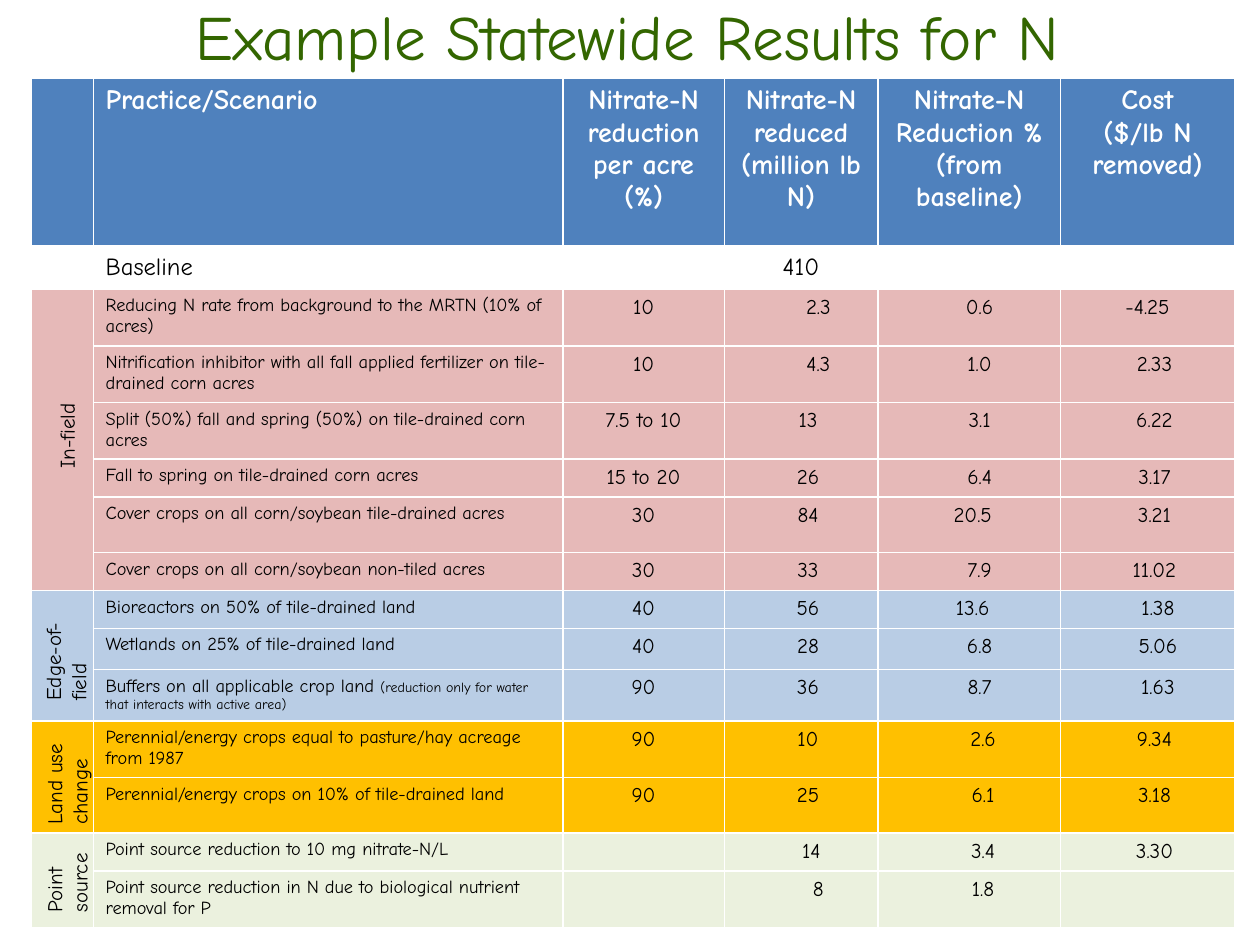
from lxml.etree import SubElement
from pptx import Presentation
from pptx.dml.color import RGBColor
from pptx.enum.text import MSO_ANCHOR as Anchor, PP_ALIGN as Align
from pptx.oxml.ns import qn
from pptx.util import Cm, Pt

COLORS = {
    "title": "336600", "header": "4F81BD", "white": "FFFFFF", "black": "000000",
    "In-field": "E6B9B8", "Edge-of-field": "B9CDE5",
    "Land use change": "FFC000", "Point source": "EBF1DE",
}
FONT = "Comic Neue"
COLUMN_WIDTHS = [1.24, 9.47, 3.25, 3.1, 3.68, 3.51]
HEADER_HEIGHT, BASELINE_HEIGHT = 3.4, 0.84
CELL_MARGIN, SHIFT_STEP = 0.25, 0.14
HEADERS = [
    "", "Practice/Scenario", "Nitrate-N reduction per acre (%)",
    "Nitrate-N reduced (million lb N)", "Nitrate-N Reduction % (from baseline)",
    "Cost\n($/lb N removed)",
]
BASELINE = ["", "Baseline", "", "410", "", ""]
# Each row: height, practice, note, values, indent steps of the values
GROUPS = {
    "In-field": [
        (1.12, "Reducing N rate from background to the MRTN (10% of acres)", "",
         ["10", "2.3", "0.6", "-4.25"], [0, 5, 3, 0]),
        (1.12, "Nitrification inhibitor with all fall applied fertilizer on tile-drained corn acres", "",
         ["10", "4.3", "1.0", "2.33"], [0, 5, 3, 2]),
        (1.12, "Split (50%) fall and spring (50%) on tile-drained corn acres", "",
         ["7.5 to 10", "13", "3.1", "6.22"], [0, 2, 3, 2]),
        (0.75, "Fall to spring on tile-drained corn acres", "",
         ["15 to 20", "26", "6.4", "3.17"], [0, 2, 3, 2]),
        (1.12, "Cover crops on all corn/soybean tile-drained acres", "",
         ["30", "84", "20.5", "3.21"], [0, 2, 1, 2]),
        (0.75, "Cover crops on all corn/soybean non-tiled acres", "",
         ["30", "33", "7.9", "11.02"], [0, 2, 3, 2]),
    ],
    "Edge-of-field": [
        (0.75, "Bioreactors on 50% of tile-drained land", "",
         ["40", "56", "13.6", "1.38"], [0, 2, 1, 3]),
        (0.83, "Wetlands on 25% of tile-drained land", "",
         ["40", "28", "6.8", "5.06"], [0, 2, 3, 3]),
        (1.02, "Buffers on all applicable crop land ",
         "(reduction only for water that interacts with active area)",
         ["90", "36", "8.7", "1.63"], [0, 2, 3, 3]),
    ],
    "Land use change": [
        (1.12, "Perennial/energy crops equal to pasture/hay acreage from 1987", "",
         ["90", "10", "2.6", "9.34"], [0, 2, 4, 2]),
        (1.12, "Perennial/energy crops on 10% of tile-drained land", "",
         ["90", "25", "6.1", "3.18"], [0, 2, 4, 2]),
    ],
    "Point source": [
        (0.75, "Point source reduction to 10 mg nitrate-N/L", "",
         ["", "14", "3.4", "3.30"], [0, 3, 4, 2]),
        (0.92, "Point source reduction in N due to biological nutrient removal for P", "",
         ["", "8", "1.8", ""], [0, 5, 4, 0]),
    ],
}
LABEL_BOXES = {
    "Point source": (0.38, 17.04, 1.93, 1.27),
    "Edge-of-field": (-0.05, 12.37, 2.74, 1.27),
    "Land use change": (0.1, 14.99, 2.49, 1.27),
    "In-field": (0.3, 8.28, 2.08, 0.76),
}


def rgb(name):
    return RGBColor.from_string(COLORS[name])


def write(para, text, size=12, color="black", bold=False, align=Align.LEFT):
    para.alignment = align
    if not text:
        SubElement(para._p, qn("a:endParaRPr"), sz=str(int(size * 100)))
        return
    span = para.add_run()
    span.text = text
    span.font.name = FONT
    span.font.size = Pt(size)
    span.font.bold = bold
    span.font.color.rgb = rgb(color)


def add_text(page, box, text, anchor=Anchor.TOP, rotation=0, **style):
    holder = page.shapes.add_textbox(*map(Cm, box))
    holder.rotation = rotation
    frame = holder.text_frame
    frame.word_wrap = True
    frame.vertical_anchor = anchor
    write(frame.paragraphs[0], text, **style)


def set_borders(cell, bottom):
    properties = cell._tc.get_or_add_tcPr()
    for side, width in (("L", 1), ("R", 1), ("T", 1), ("B", bottom)):
        line = SubElement(properties, qn(f"a:ln{side}"), w=str(Pt(width)))
        fill = SubElement(line, qn("a:solidFill"))
        SubElement(fill, qn("a:srgbClr"), val=COLORS["white"])


def fill_cell(cell, text, fill, note="", shift=0, bottom=1, **style):
    set_borders(cell, bottom)
    cell.fill.solid()
    cell.fill.fore_color.rgb = rgb(fill)
    cell.margin_left = Cm(CELL_MARGIN + shift * SHIFT_STEP)
    frame = cell.text_frame
    for index, line in enumerate(text.split("\n")):
        para = frame.add_paragraph() if index else frame.paragraphs[0]
        write(para, line, **style)
    if note:
        write(frame.paragraphs[0], note, size=8)


def add_results(page, box):
    groups = [(name, row) for name, rows in GROUPS.items() for row in rows]
    heights = [HEADER_HEIGHT, BASELINE_HEIGHT] + [row[0] for _, row in groups]
    table = page.shapes.add_table(len(heights), len(COLUMN_WIDTHS), *map(Cm, box)).table
    table.horz_banding = False
    for column, width in zip(table.columns, COLUMN_WIDTHS):
        column.width = Cm(width)
    for row, height in zip(table.rows, heights):
        row.height = Cm(height)
    for column in range(len(COLUMN_WIDTHS)):
        align = Align.LEFT if column < 2 else Align.CENTER
        fill_cell(table.cell(0, column), HEADERS[column], "header", bottom=3,
                  size=16, color="white", bold=True, align=align)
        fill_cell(table.cell(1, column), BASELINE[column], "white", size=14, align=align)
    for index, (name, (_, practice, note, values, shifts)) in enumerate(groups, 2):
        fill_cell(table.cell(index, 0), "", name)
        fill_cell(table.cell(index, 1), practice, name, note=note, size=10.5)
        for column, (value, shift) in enumerate(zip(values, shifts), 2):
            fill_cell(table.cell(index, column), value, name, shift=shift, align=Align.CENTER)
    first = 2
    for rows in GROUPS.values():
        last = first + len(rows) - 1
        table.cell(first, 0).merge(table.cell(last, 0))
        first = last + 1


def main():
    deck = Presentation()
    deck.slide_width, deck.slide_height = Cm(25.4), Cm(19.05)
    page = deck.slides.add_slide(deck.slide_layouts[6])
    add_text(page, (0.05, -0.05, 25.2, 1.52), "Example Statewide Results for N",
             anchor=Anchor.MIDDLE, size=36, color="title", align=Align.CENTER)
    add_results(page, (0.64, 1.58, sum(COLUMN_WIDTHS), 16.7))
    for name, box in LABEL_BOXES.items():
        add_text(page, box, name, rotation=270)
    deck.save("out.pptx")


if __name__ == "__main__":
    main()
